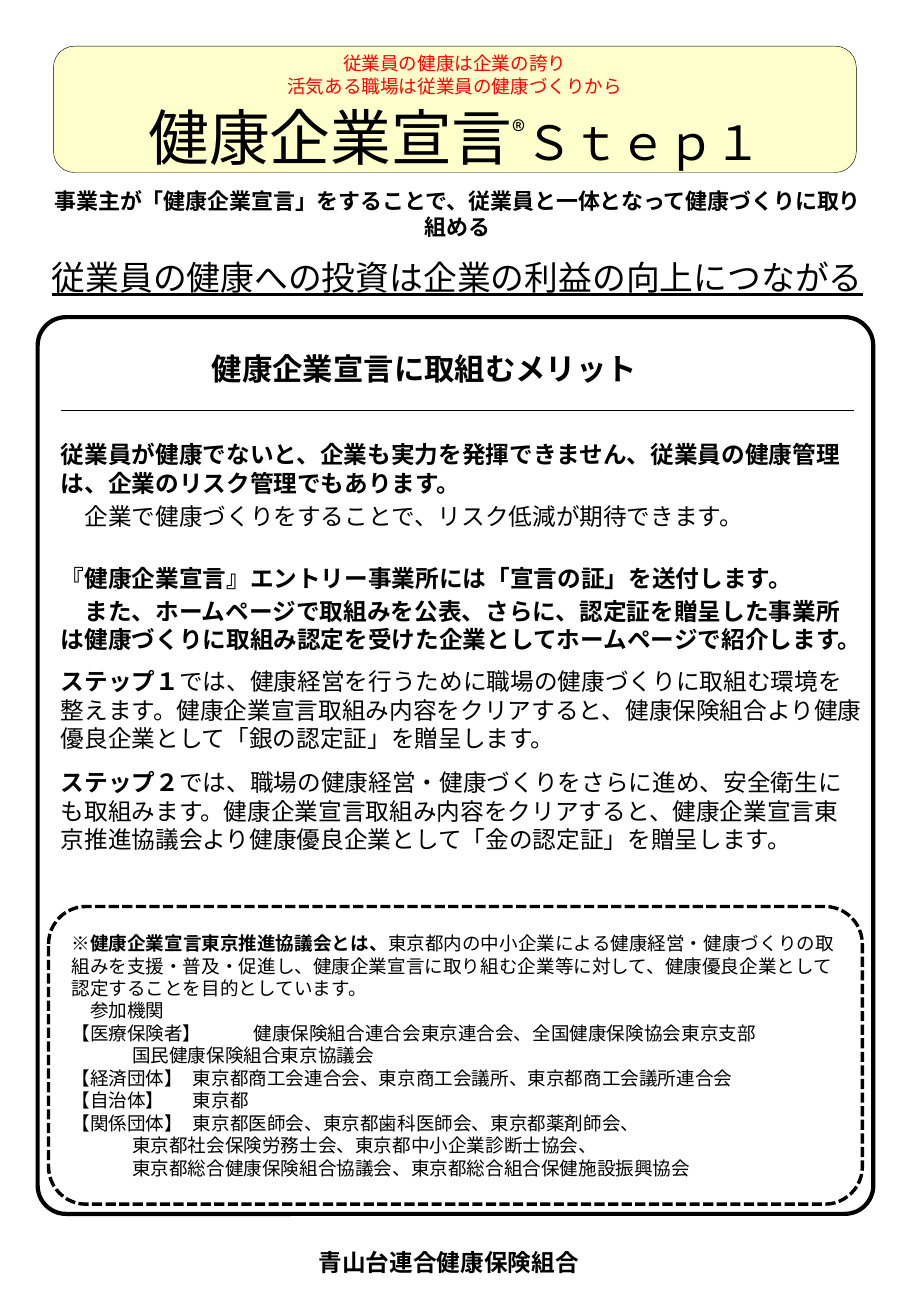
from lxml.etree import SubElement
from pptx import Presentation
from pptx.dml.color import RGBColor
from pptx.enum.dml import MSO_LINE
from pptx.enum.lang import MSO_LANGUAGE_ID as Language
from pptx.enum.shapes import MSO_CONNECTOR as Connector, MSO_SHAPE as Shape
from pptx.enum.text import MSO_ANCHOR as Anchor, MSO_AUTO_SIZE as AutoSize, PP_ALIGN as Align
from pptx.oxml.ns import qn
from pptx.util import Inches, Pt

COLORS = {"ink": "000000", "paper": "FFFFFF", "cream": "FFFFCC", "red": "FF0000"}
GOTHIC = "Noto Sans CJK JP"
LINE_RATIO = 1.21
NO_INSETS = (0, 0, 0, 0)
INSETS = (0.1, 0.05, 0.1, 0.05)


def color(name):
    return RGBColor.from_string(COLORS[name])


class Flyer:
    def __init__(self, width, height):
        self.deck = Presentation()
        self.deck.slide_width, self.deck.slide_height = Inches(width), Inches(height)
        self.page = self.deck.slides.add_slide(self.deck.slide_layouts[1])

    def shape(self, kind, place, fill="paper", line=None, weight=1, corner=None, dash=None):
        box = self.page.shapes.add_shape(kind, *map(Inches, place))
        box.shadow.inherit = False
        box.fill.solid()
        box.fill.fore_color.rgb = color(fill)
        if line:
            box.line.color.rgb = color(line)
            box.line.width = Pt(weight)
            box.line.dash_style = dash
        else:
            box.line.fill.background()
        if corner is not None:
            box.adjustments[0] = corner
        return box

    def textbox(self, place):
        return self.page.shapes.add_textbox(*map(Inches, place))

    def placeholder(self, index, place):
        box = self.page.placeholders[index]
        self.page.shapes.element.append(box.element)
        for name, value in zip(("left", "top", "width", "height"), place):
            setattr(box, name, Inches(value))
        return box

    def rule(self, left, right, top, weight):
        line = self.page.shapes.add_connector(
            Connector.STRAIGHT, *map(Inches, (left, top, right, top)))
        line.line.color.rgb = color("ink")
        line.line.width = Pt(weight)
        SubElement(line.element.spPr, qn("a:effectLst"))

    def text(self, box, paras, size, font=GOTHIC, hue="ink", align=Align.CENTER,
             anchor=Anchor.MIDDLE, insets=INSETS):
        frame = box.text_frame
        layout = {"word_wrap": True, "auto_size": AutoSize.NONE, "vertical_anchor": anchor}
        sides = ("margin_left", "margin_top", "margin_right", "margin_bottom")
        layout.update(zip(sides, map(Inches, insets)))
        for name, value in layout.items():
            setattr(frame, name, value)
        for number, (before, spans) in enumerate(paras):
            para = frame.add_paragraph() if number else frame.paragraphs[0]
            properties = para._p.get_or_add_pPr()
            properties.set("marL", "0")
            properties.set("indent", "0")
            SubElement(properties, qn("a:buNone"))
            largest = max(style.get("size", size) for _, style in spans)
            spacing = {"alignment": align, "space_before": Pt(before),
                       "line_spacing": Pt(round(largest * LINE_RATIO, 1))}
            for name, value in spacing.items():
                setattr(para, name, value)
            for words, style in spans:
                self.span(para, words, {"size": size, "name": font, **style}, hue)

    def span(self, para, words, style, hue):
        span = para.add_run()
        span.text = words
        values = {"bold": False, "language_id": Language.JAPANESE, **style}
        values["size"] = Pt(values["size"])
        raised = values.pop("raised", None)
        for name, value in values.items():
            setattr(span.font, name, value)
        span.font.color.rgb = color(hue)
        properties = span._r.get_or_add_rPr()
        SubElement(properties, qn("a:ea")).set("typeface", values["name"])
        if raised:
            properties.set("baseline", str(raised * 1000))


BOLD = {"bold": True}

MERITS = [
    (0, [("従業員が健康でないと、企業も実力を発揮できません、従業員の健康管理は、企業のリスク管理でもあります。", BOLD)]),
    (2.8, [("　企業で健康づくりをすることで、リスク低減が期待できます。", {})]),
    (19.7, [("『健康企業宣言』エントリー事業所には「宣言の証」を送付します。", BOLD)]),
    (2.8, [("　また、ホームページで取組みを公表、さらに、認定証を贈呈した事業所は健康づくりに取組み認定を受けた企業としてホームページで紹介します。", BOLD)]),
    (8, [("ステップ１", BOLD),
         ("では、健康経営を行うために職場の健康づくりに取組む環境を整えます。健康企業宣言取組み内容をクリアすると、健康保険組合より健康優良企業として「銀の認定証」を贈呈します。", {})]),
    (9, [("ステップ２", BOLD),
         ("では、職場の健康経営・健康づくりをさらに進め、安全衛生にも取組みます。健康企業宣言取組み内容をクリアすると、健康企業宣言東京推進協議会より健康優良企業として「金の認定証」を贈呈します。", {})]),
]

COUNCIL = [
    [("※", {}), ("健康企業宣言東京推進協議会とは、", BOLD),
     ("東京都内の中小企業による健康経営・健康づくりの取組みを支援・普及・促進し、健康企業宣言に取り組む企業等に対して、健康優良企業として認定することを目的としています。", {})],
] + [[(words, {})] for words in (
    "　参加機関",
    "【医療保険者】\t健康保険組合連合会東京連合会、全国健康保険協会東京支部",
    "\t国民健康保険組合東京協議会",
    "【経済団体】\t東京都商工会連合会、東京商工会議所、東京都商工会議所連合会",
    "【自治体】\t東京都",
    "【関係団体】\t東京都医師会、東京都歯科医師会、東京都薬剤師会、",
    "\t東京都社会保険労務士会、東京都中小企業診断士協会、",
    "\t東京都総合健康保険組合協議会、東京都総合組合保健施設振興協会",
)]


def main():
    flyer = Flyer(7.5, 10.83)

    message = flyer.shape(Shape.RECTANGLE, (0.29, 1.56, 6.95, 0.87), line="paper")
    flyer.text(message, [
        (0, [("事業主が「健康企業宣言」をすることで、従業員と一体となって健康づくりに取り組める", BOLD)]),
        (9.7, [("従業員の健康への投資は企業の利益の向上につながる", {"size": 20, "underline": True})]),
    ], 13, font="Calibri")

    flyer.shape(Shape.ROUNDED_RECTANGLE, (0.31, 2.61, 6.88, 7.38),
                line="ink", weight=2.5, corner=0.034)
    merits = flyer.placeholder(1, (0.5, 3.62, 6.6, 3.8))
    flyer.text(merits, MERITS, 14, align=Align.LEFT, anchor=Anchor.TOP, insets=NO_INSETS)
    heading = flyer.textbox((0.4, 2.76, 6.69, 0.54))
    flyer.text(heading, [(0, [("健康企業宣言に取組むメリット", BOLD)])], 18,
               insets=(0.1, 0.05, 0.6, 0.05))
    flyer.rule(0.5, 7.03, 3.38, 0.75)

    banner = (0.44, 0.38, 6.61, 1.04)
    flyer.shape(Shape.ROUNDED_RECTANGLE, banner, fill="cream", line="ink", weight=0.25)
    title = flyer.placeholder(0, banner)
    flyer.text(title, [(0, [("健康企業宣言", {}), ("®", {"size": 28, "raised": 40}),
                            ("Ｓｔｅｐ１", {"size": 28})])],
               36, anchor=Anchor.BOTTOM, insets=NO_INSETS)
    slogan = flyer.textbox((1.62, 0.38, 4.25, 0.47))
    flyer.text(slogan, [(0, [("従業員の健康は企業の誇り", {})]),
                        (0, [("活気ある職場は従業員の健康づくりから", {})])],
               11, hue="red", anchor=Anchor.TOP)

    publisher = flyer.shape(Shape.RECTANGLE, (2.56, 10.22, 2.27, 0.33))
    flyer.text(publisher, [(0, [("青山台連合健康保険組合", BOLD)])], 14, insets=NO_INSETS)

    council = flyer.shape(Shape.ROUNDED_RECTANGLE, (0.4, 7.46, 6.7, 2.45), line="ink",
                          weight=2, corner=0.126, dash=MSO_LINE.SQUARE_DOT)
    flyer.text(council, [(0, spans) for spans in COUNCIL], 11, font="Arial", align=Align.LEFT)

    flyer.deck.save("out.pptx")


if __name__ == "__main__":
    main()
